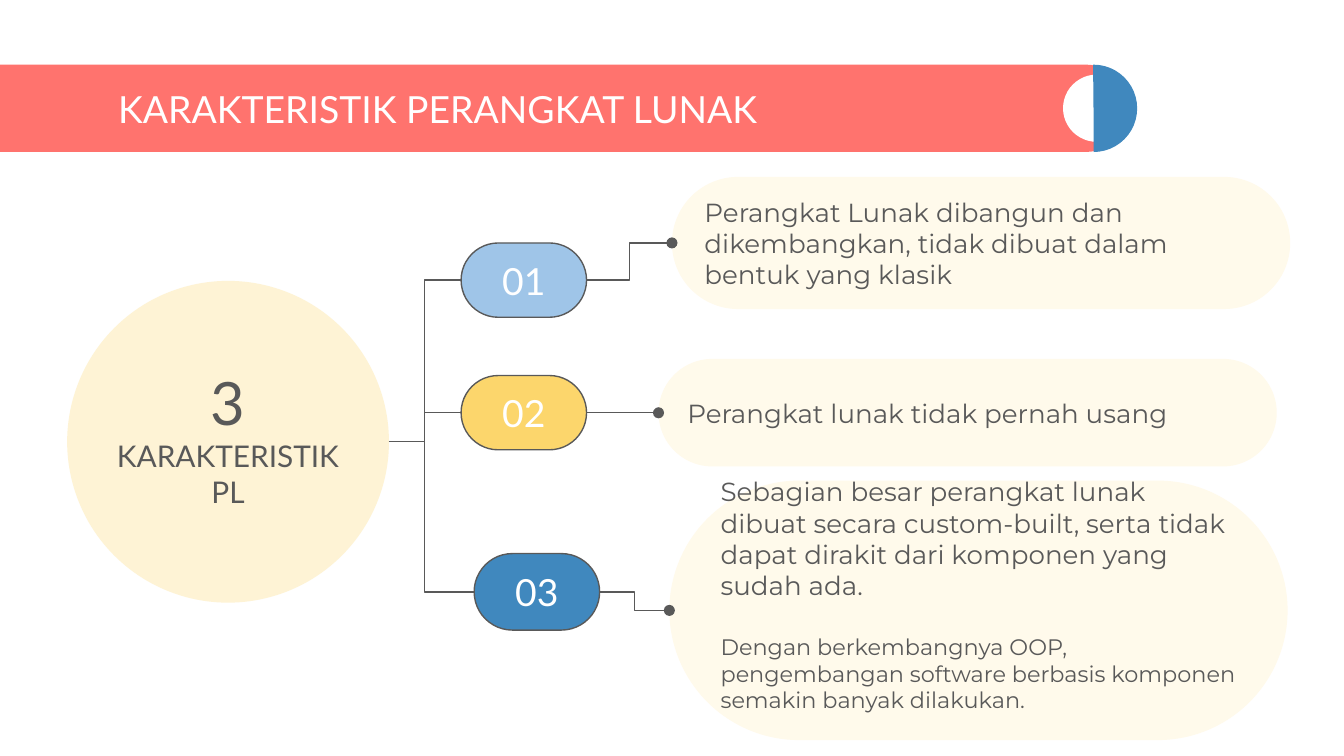
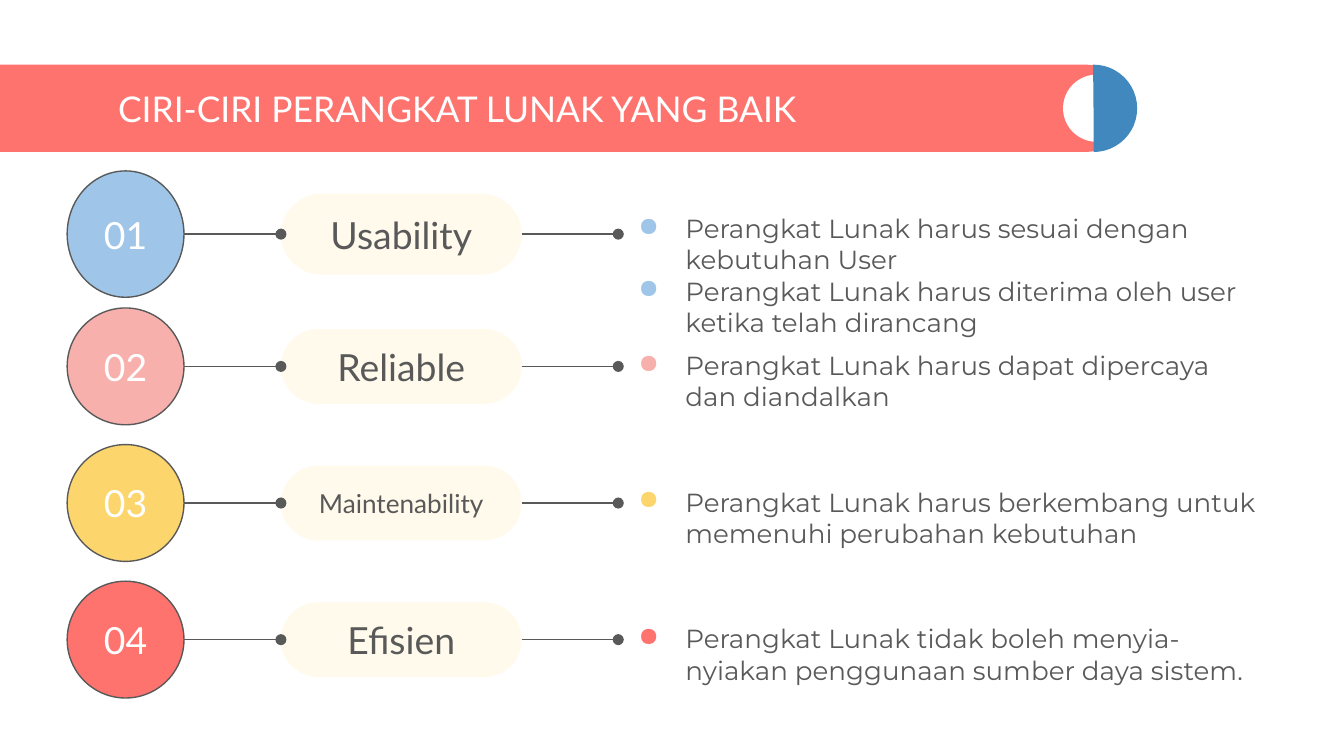
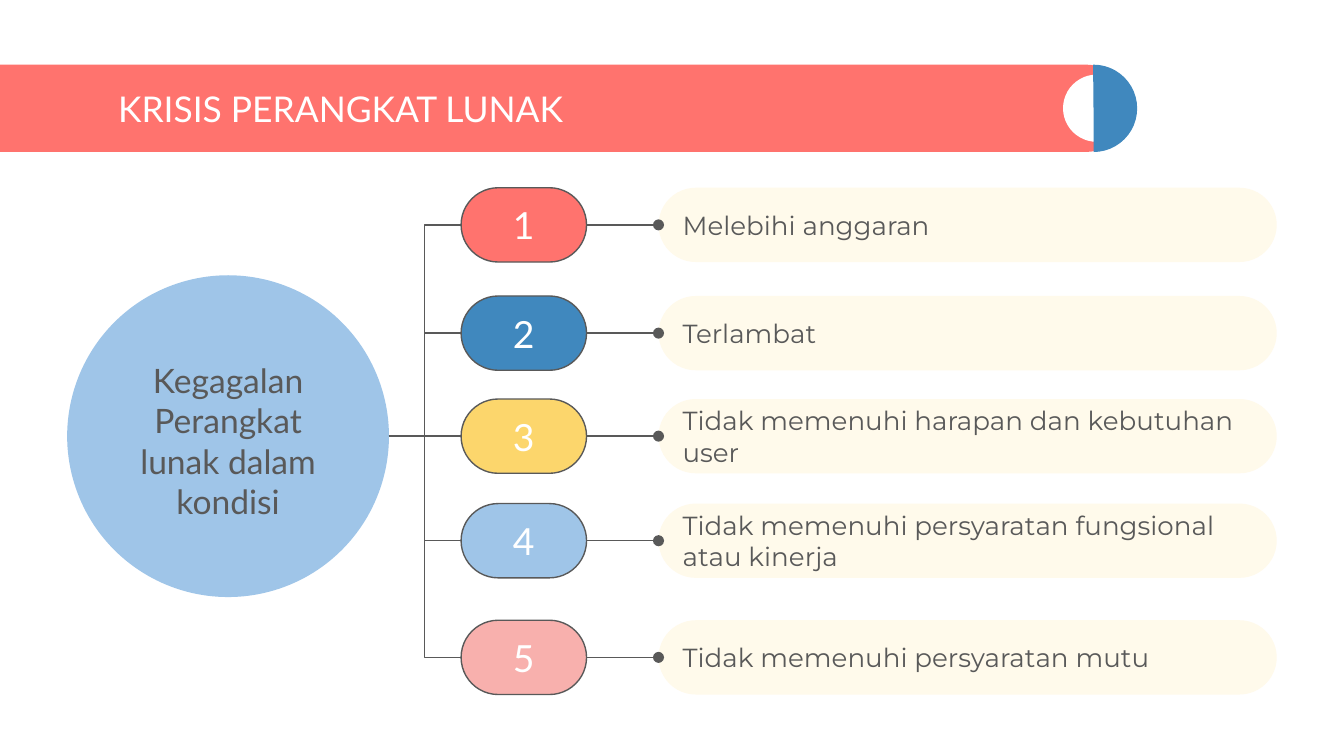
"""Build three slides on the traits, qualities and crises of software."""
from lxml import etree
from pptx import Presentation
from pptx import util as u
from pptx.dml import color
from pptx.enum import shapes, text
from pptx.oxml import ns

COLORS = {
    "white": "FFFFFF",
    "coral": "FF736E",
    "blue": "4088BE",
    "sky": "9FC5E8",
    "yellow": "FCD66C",
    "pink": "F8B0AD",
    "amber": "FBBE18",
    "cream": "FFFAEB",
    "gray": "595959",
}
HEADING, BODY = "Lato", "Montserrat"
SHAPE = shapes.MSO_SHAPE
INSET = 7.2
LINE_HEIGHT = 17
TRUNK_LEFT = 227.5


def rgb(name):
    """Return the named colour."""
    return color.RGBColor.from_string(COLORS[name])


def points(*lengths):
    """Convert numbers to lengths in points."""
    return [u.Pt(length) for length in lengths]


def add_xml(parent, tag, **attributes):
    """Append a drawing element with attributes."""
    child = etree.SubElement(parent, ns.qn(tag))
    for name, value in attributes.items():
        child.set(name, str(value))
    return child


def write(shape, paragraphs, size=14, font=BODY, ink="gray", align="LEFT",
          anchor="MIDDLE", insets=(INSET,) * 4, gap=0, bullet=None):
    """Fill a shape with paragraphs, each a string or a (string, size) pair."""
    frame = shape.text_frame
    frame.word_wrap = True
    frame.auto_size = text.MSO_AUTO_SIZE.NONE
    frame.vertical_anchor = text.MSO_ANCHOR[anchor]
    (frame.margin_left, frame.margin_top,
     frame.margin_right, frame.margin_bottom) = points(*insets)
    for index, item in enumerate(paragraphs):
        words, own_size = item if isinstance(item, tuple) else (item, size)
        paragraph = frame.paragraphs[0] if index == 0 else frame.add_paragraph()
        paragraph.alignment = text.PP_ALIGN[align]
        if index and gap:
            paragraph.space_before = u.Pt(gap)
        run = paragraph.add_run()
        run.text = words
        run.font.size = u.Pt(own_size)
        run.font.name = font
        run.font.color.rgb = rgb(ink)
        if bullet:
            add_bullet(paragraph, bullet)


def add_bullet(paragraph, ink):
    """Give a paragraph a hanging coloured dot."""
    properties = paragraph.runs[0].font and paragraph._p.get_or_add_pPr()
    properties.set("marL", str(u.Pt(36)))
    properties.set("indent", str(u.Pt(-25.2)))
    add_xml(add_xml(properties, "a:buClr"), "a:srgbClr", val=COLORS[ink])
    add_xml(properties, "a:buChar", char="●")


def add_text(slide, box, paragraphs, **style):
    """Place a text box."""
    write(slide.shapes.add_textbox(*points(*box)), paragraphs, **style)


def add_shape(slide, kind, box, fill, outline=None):
    """Place a flat preset shape; rounded rectangles become pills."""
    shape = slide.shapes.add_shape(kind, *points(*box))
    shape.shadow.inherit = False
    shape.fill.solid()
    shape.fill.fore_color.rgb = rgb(fill)
    if outline:
        shape.line.color.rgb = rgb(outline)
        shape.line.width = u.Pt(0.75)
    else:
        shape.line.fill.background()
    if kind == SHAPE.ROUNDED_RECTANGLE:
        shape.adjustments[0] = 0.5
    return shape


def add_badge(slide, kind, box, fill, number):
    """Place an outlined shape holding a number."""
    badge = add_shape(slide, kind, box, fill, "gray")
    write(badge, [number], size=20, font=HEADING, ink="white", align="CENTER")
    return badge


def add_link(slide, target, source=None, start=(0, 0), elbow=True, dot=True, bend=None):
    """Join a source shape or a start point to the left side of a target."""
    kind = shapes.MSO_CONNECTOR.ELBOW if elbow else shapes.MSO_CONNECTOR.STRAIGHT
    link = slide.shapes.add_connector(
        kind, *points(*start), target.left, target.top + target.height // 2)
    if source is not None:
        link.begin_connect(source, 3)
    link.end_connect(target, 1)
    link.line.color.rgb = rgb("gray")
    link.line.width = u.Pt(0.75)
    properties = link.element.spPr
    if dot:
        add_xml(properties.find(ns.qn("a:ln")), "a:tailEnd", type="oval")
    if bend:
        guides = properties.find(ns.qn("a:prstGeom")).find(ns.qn("a:avLst"))
        share = (u.Pt(bend) - link.begin_x) / (link.end_x - link.begin_x)
        add_xml(guides, "a:gd", name="adj1", fmla=f"val {round(share * 100000)}")
    add_xml(properties, "a:effectLst")
    return link


def add_header(slide, title, size, box=(-23, 34.6, 628, 46.8)):
    """Draw the title band with its split disc."""
    left, top, width, height = box
    right = left + width
    add_shape(slide, SHAPE.ROUNDED_RECTANGLE, box, "coral")
    disc = 36
    add_shape(slide, SHAPE.OVAL,
              (right - disc + 0.5, top + (height - disc) / 2, disc, disc), "white")
    half = add_shape(slide, SHAPE.PIE, (right - 42.6, top, height, height), "blue")
    half.rotation = 180
    half.adjustments[0], half.adjustments[1] = 53.67, 162
    add_text(slide, (left + 79.2, top + 8.6, 501.8, 29.5), [title],
             size=size, font=HEADING, ink="white")


def add_hub(slide, box, fill, label_box, label, size, alpha=None):
    """Draw the large circle with a label placed relative to it."""
    hub = add_shape(slide, SHAPE.OVAL, box, fill)
    if alpha:
        tint = hub.element.spPr.find(ns.qn("a:solidFill"))[0]
        add_xml(tint, "a:alpha", val=alpha * 1000)
    left, top, width, height = label_box
    add_text(slide, (box[0] + left, box[1] + top, width, height), label,
             size=size, font=HEADING, align="CENTER", anchor="TOP")


def add_branch(slide, hub_box, badge_box, panel_box, fill, number, paragraphs, **style):
    """Draw a numbered badge with its panel, joined to the hub."""
    panel = add_shape(slide, SHAPE.ROUNDED_RECTANGLE, panel_box, "cream")
    write(panel, paragraphs, **style)
    badge = add_badge(slide, SHAPE.ROUNDED_RECTANGLE, badge_box, fill, number)
    left, top, width, height = hub_box
    add_link(slide, badge, start=(left + width, top + height / 2),
             dot=False, bend=TRUNK_LEFT)
    add_link(slide, panel, source=badge)


def add_quality(slide, box, fill, number, name, size, sentences):
    """Draw one row: numbered circle, named pill and bulleted text."""
    left, top, width, height = box
    middle = top + height / 2
    circle = 62.6
    pill_height = height * 0.64
    add_badge(slide, SHAPE.OVAL, (left, top, circle, height), fill, number)
    pill = add_shape(slide, SHAPE.ROUNDED_RECTANGLE,
                     (left + 114.5, middle - pill_height / 2, 129, pill_height), "cream")
    write(pill, [name], size=size, font=HEADING, align="CENTER")
    notes_left = left + 295.2
    notes = slide.shapes.add_textbox(
        *points(notes_left, top + 1.5, width - 295.2, height - 3))
    write(notes, sentences, anchor="TOP", bullet=fill,
          insets=(0, 3.6 + LINE_HEIGHT, INSET, 3.6))
    add_link(slide, pill, start=(left + circle, middle), elbow=False)
    add_link(slide, notes, source=pill, elbow=False)


def build_traits(slide):
    """Build the slide on three traits of software."""
    add_header(slide, "KARAKTERISTIK PERANGKAT LUNAK", 20)
    hub = (36, 150.5, 172.4, 172.4)
    add_hub(slide, hub, "amber", (0, 38.2, 172.4, 56.2),
            [("3", 32), "KARAKTERISTIK", "PL"], 16, alpha=18)
    add_branch(slide, hub, (247, 130.2, 67.2, 39.8), (360, 94.8, 331.2, 70.8), "sky", "01",
               ["Perangkat Lunak dibangun dan dikembangkan, tidak dibuat dalam "
                "bentuk yang klasik"])
    add_branch(slide, hub, (247, 201.2, 67.2, 39.8), (352.8, 192.3, 331.2, 57.6),
               "yellow", "02", ["Perangkat lunak tidak pernah usang"])
    add_branch(slide, hub, (254, 296.6, 67.2, 41), (358.6, 257.5, 331.2, 139), "blue", "03",
               ["Sebagian besar perangkat lunak dibuat secara custom-built, serta "
                "tidak dapat dirakit dari komponen yang sudah ada.",
                ("Dengan berkembangnya OOP, pengembangan software berbasis komponen "
                 "semakin banyak dilakukan.", 12)],
               gap=LINE_HEIGHT, insets=(INSET, INSET, INSET, INSET + LINE_HEIGHT))


def build_qualities(slide):
    """Build the slide on the qualities of good software."""
    add_header(slide, "CIRI-CIRI PERANGKAT LUNAK YANG BAIK", 19)
    add_quality(slide, (36, 91.6, 648, 67.7), "sky", "01", "Usability", 20,
                ["Perangkat Lunak harus sesuai dengan kebutuhan User",
                 "Perangkat Lunak harus diterima oleh user ketika telah dirancang"])
    qualities = [
        ("pink", "02", "Reliable", 20,
         "Perangkat Lunak harus dapat dipercaya dan diandalkan"),
        ("yellow", "03", "Maintenability", 14,
         "Perangkat Lunak harus berkembang untuk memenuhi perubahan kebutuhan"),
        ("coral", "04", "Efisien", 20,
         "Perangkat Lunak tidak boleh menyia-nyiakan penggunaan sumber daya sistem."),
    ]
    for index, (fill, number, name, size, sentence) in enumerate(qualities):
        add_quality(slide, (36, 165 + 73.2 * index, 648, 62.6),
                    fill, number, name, size, [sentence])


def build_crises(slide):
    """Build the slide on the conditions of software failure."""
    add_header(slide, "KRISIS PERANGKAT LUNAK", 19)
    hub = (36, 147.5, 172.4, 172.4)
    add_hub(slide, hub, "sky", (16.4, 38.2, 139.6, 75.6),
            ["Kegagalan Perangkat lunak dalam kondisi"], 18)
    crises = [
        (100.6, "coral", "Melebihi anggaran"),
        (158.6, "blue", "Terlambat"),
        (213.8, "yellow", "Tidak memenuhi harapan dan kebutuhan user"),
        (269.8, "sky", "Tidak memenuhi persyaratan fungsional atau kinerja"),
        (332.3, "pink", "Tidak memenuhi persyaratan mutu"),
    ]
    for number, (top, fill, sentence) in enumerate(crises, start=1):
        add_branch(slide, hub, (247, top, 67.2, 39.8), (352.8, top, 331.2, 39.8),
                   fill, str(number), [sentence])


def main():
    """Build and save the presentation."""
    presentation = Presentation()
    presentation.slide_width, presentation.slide_height = points(720, 405)
    for build in (build_traits, build_qualities, build_crises):
        build(presentation.slides.add_slide(presentation.slide_layouts[6]))
    presentation.save("out.pptx")


if __name__ == "__main__":
    main()
